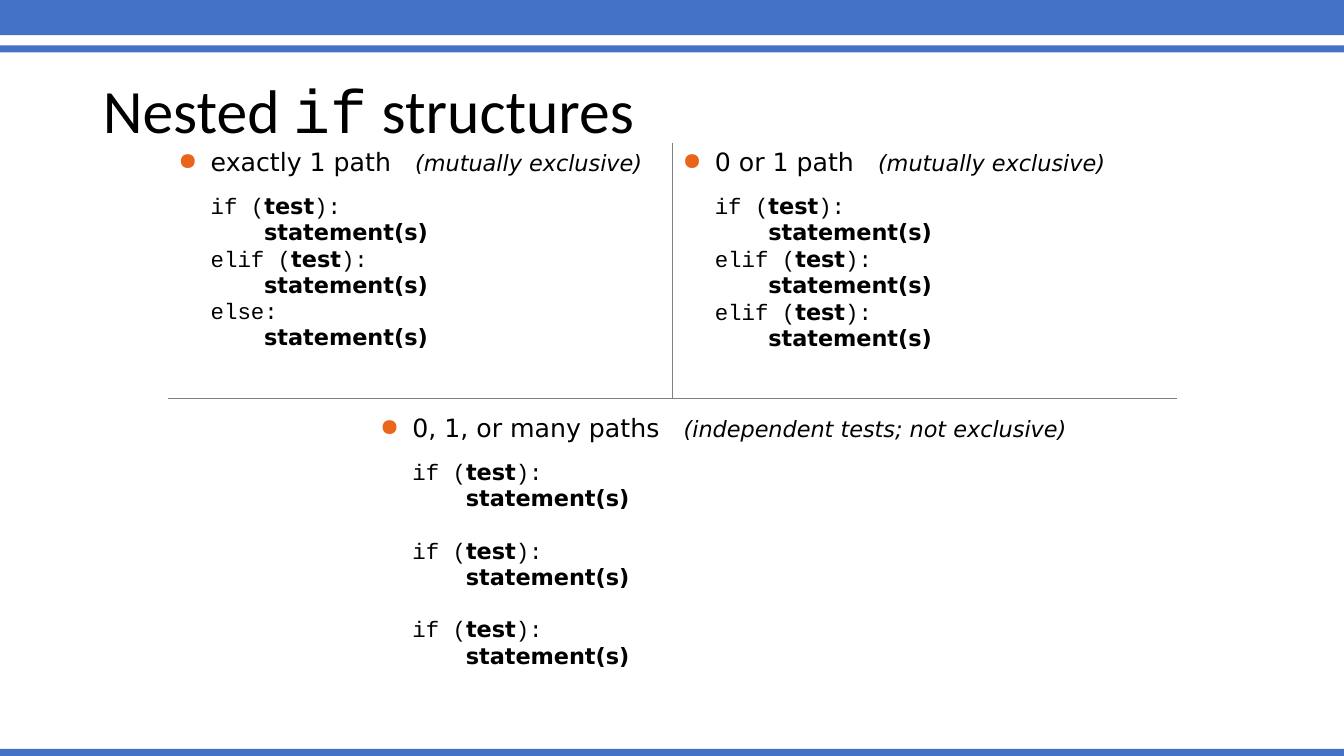
"""Build a slide that compares three forms of nested if structures."""
from lxml import etree
from pptx import Presentation
from pptx.dml.color import RGBColor
from pptx.enum.shapes import MSO_SHAPE
from pptx.enum.text import MSO_ANCHOR, MSO_AUTO_SIZE, PP_ALIGN
from pptx.oxml.ns import qn
from pptx.util import Inches, Pt

RECTANGLE = MSO_SHAPE.RECTANGLE
MIDDLE = MSO_ANCHOR.MIDDLE
NO_AUTOFIT = MSO_AUTO_SIZE.NONE
LEFT = PP_ALIGN.LEFT

BLUE, ORANGE, GREY, BLACK = "4472C4", "EB641B", "808080", "000000"
TITLE_FONT, CODE_FONT, BODY_FONT = "Calibri", "Courier New", "DejaVu Sans"
TITLE_ONLY = 5
HANGING = 0.32
STATEMENT_INDENT = 0.53
LINE_GAP, AFTER_HEADING, BLANK_LINE = 3.7, 14, 22

BANDS = [(-0.03, 0.38), (0.45, 0.07), (7.43, 0.07)]
EXCLUSIVE = "(mutually exclusive)"
INDEPENDENT = "(independent tests; not exclusive)"


def color(value):
    """Turn a hex string into a colour."""
    return RGBColor.from_string(value)


def add_band(slide, top, height):
    """Draw a blue band across the slide."""
    band = slide.shapes.add_shape(
        RECTANGLE, 0, Inches(top), Inches(13.33), Inches(height))
    band.fill.solid()
    band.fill.fore_color.rgb = color(BLUE)
    band.line.fill.background()
    band.shadow.inherit = False


def add_run(paragraph, text, font_name, size=16, bold=False, italic=False):
    """Add a formatted black run and return it."""
    run = paragraph.add_run()
    run.text = text
    run.font.name = font_name
    run.font.size = Pt(size)
    run.font.bold = bold
    run.font.italic = italic
    run.font.color.rgb = color(BLACK)
    return run


def set_title(slide):
    """Place and fill the title placeholder."""
    title = slide.shapes.title
    title.left, title.top = Inches(0.92), Inches(0.4)
    title.width, title.height = Inches(11.5), Inches(1.45)
    frame = title.text_frame
    frame.auto_size = NO_AUTOFIT
    frame.vertical_anchor = MIDDLE
    paragraph = frame.paragraphs[0]
    paragraph.alignment = LEFT
    paragraph.line_spacing = 0.9
    add_run(paragraph, "Nested ", TITLE_FONT, 44)
    add_run(paragraph, "if", CODE_FONT, 44)
    add_run(paragraph, " structures", TITLE_FONT, 44)


def add_heading(paragraph, text, note, indent):
    """Fill a bulleted heading with a note in italics."""
    properties = paragraph._p.get_or_add_pPr()
    properties.set("marL", str(Inches(indent)))
    properties.set("indent", str(-Inches(HANGING)))
    bullet_color = etree.SubElement(properties, qn("a:buClr"))
    etree.SubElement(bullet_color, qn("a:srgbClr"), val=ORANGE)
    etree.SubElement(properties, qn("a:buSzPct"), val="95000")
    etree.SubElement(properties, qn("a:buChar"), char="●")
    add_run(paragraph, text, BODY_FONT, 18)
    gap = add_run(paragraph, " ", BODY_FONT, 18)
    gap.font._element.set("spc", "1140")
    add_run(paragraph, note, BODY_FONT, italic=True)


def add_code_line(frame, indent, space_before):
    """Add an empty code paragraph."""
    paragraph = frame.add_paragraph()
    paragraph.line_spacing = 0.8
    paragraph.space_before = Pt(space_before)
    paragraph._p.get_or_add_pPr().set("marL", str(Inches(indent)))
    return paragraph


def add_branch(frame, keyword, indent, space_before):
    """Add a branch line and its indented statement line."""
    paragraph = add_code_line(frame, indent, space_before)
    if keyword == "else":
        add_run(paragraph, "else:", CODE_FONT)
    else:
        add_run(paragraph, f"{keyword} (", CODE_FONT)
        add_run(paragraph, "test", BODY_FONT, bold=True)
        add_run(paragraph, "):", CODE_FONT)
    statement = add_code_line(frame, indent + STATEMENT_INDENT, LINE_GAP)
    add_run(statement, "statement(s)", BODY_FONT, bold=True)


def set_borders(cell, visible):
    """Draw the named borders in grey and hide the others."""
    properties = cell._tc.get_or_add_tcPr()
    for position, side in enumerate("LRTB"):
        line = etree.Element(qn(f"a:ln{side}"), w=str(Pt(0.5)))
        if side in visible:
            fill = etree.SubElement(line, qn("a:solidFill"))
            etree.SubElement(fill, qn("a:srgbClr"), val=GREY)
        else:
            etree.SubElement(line, qn("a:noFill"))
        properties.insert(position, line)


def fill_cell(cell, text, note, keywords, indent=HANGING,
              branch_gap=LINE_GAP, margin_top=0.05):
    """Write a heading and its branches into a cell."""
    cell.margin_top = Inches(margin_top)
    frame = cell.text_frame
    add_heading(frame.paragraphs[0], text, note, indent)
    for number, keyword in enumerate(keywords):
        gap = branch_gap if number else AFTER_HEADING
        add_branch(frame, keyword, indent, gap)


def add_structures(slide):
    """Add the table of the three structures."""
    table = slide.shapes.add_table(
        2, 2, Inches(1.67), Inches(1.42), Inches(10), Inches(5.59)).table
    table.first_row = False
    table.horz_banding = False
    table.rows[0].height = Inches(2.53)
    table.rows[1].height = Inches(3.06)
    for cell, borders in zip(table.iter_cells(), ["RB", "LB", "T", "T"]):
        cell.fill.background()
        set_borders(cell, borders)
    table.cell(1, 0).merge(table.cell(1, 1))
    fill_cell(table.cell(0, 0), "exactly 1 path", EXCLUSIVE,
              ["if", "elif", "else"])
    fill_cell(table.cell(0, 1), "0 or 1 path", EXCLUSIVE,
              ["if", "elif", "elif"])
    fill_cell(table.cell(1, 0), "0, 1, or many paths", INDEPENDENT,
              ["if", "if", "if"], indent=2 + HANGING,
              branch_gap=BLANK_LINE, margin_top=0.16)


def main():
    """Build and save the presentation."""
    presentation = Presentation()
    presentation.slide_width = Inches(13.33)
    presentation.slide_height = Inches(7.5)
    layout = presentation.slide_layouts[TITLE_ONLY]
    slide = presentation.slides.add_slide(layout)
    for top, height in BANDS:
        add_band(slide, top, height)
    set_title(slide)
    add_structures(slide)
    presentation.save("out.pptx")


if __name__ == "__main__":
    main()
